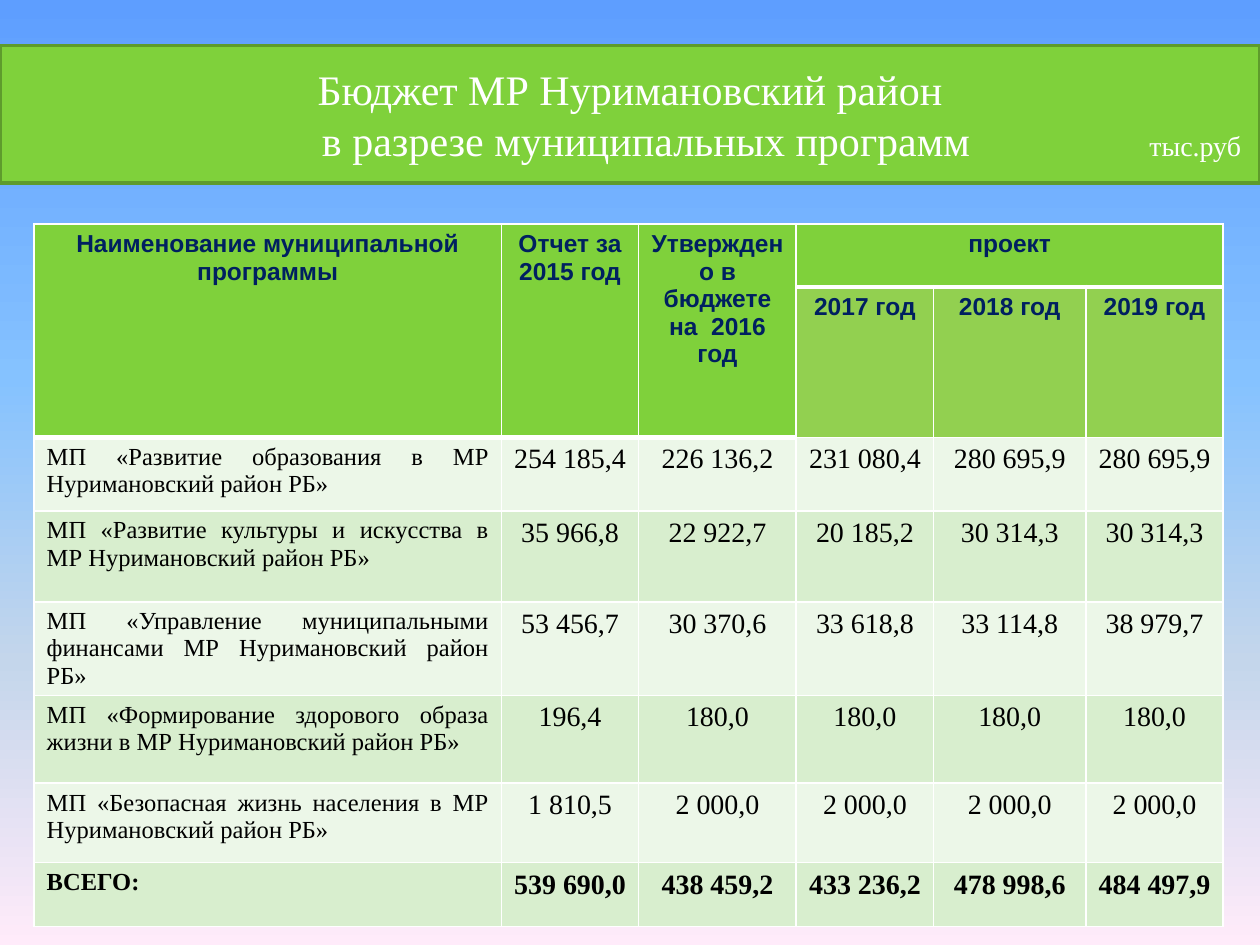
from typing import NamedTuple

from lxml import etree
from pptx import Presentation
from pptx.dml.color import RGBColor
from pptx.enum.text import MSO_ANCHOR, PP_ALIGN
from pptx.oxml.ns import qn
from pptx.util import Pt

CENTER, JUSTIFY, LEFT = PP_ALIGN.CENTER, PP_ALIGN.JUSTIFY, PP_ALIGN.LEFT
MIDDLE = MSO_ANCHOR.MIDDLE

SERIF, SANS = "Times New Roman", "Arial"
WHITE, BLACK, NAVY = "FFFFFF", "000000", "002060"
GREEN, DARK_GREEN, YEAR_GREEN = "7FD13B", "5E9B2C", "92D050"
BANDS = ("ECF7E8", "D8EECE")
SKY = ((0, "5E9EFF"), (40, "85C2FF"), (70, "C4D6EB"), (100, "FFEBFA"))

COLUMN_WIDTHS = (267, 78.5, 90, 78.5, 87, 78.5)
ROW_HEIGHTS = (36, 36, 42, 52, 40, 50, 45.5, 36.5)


class Heading(NamedTuple):
    text: str
    row: int
    column: int
    last_row: int
    last_column: int
    fill: str = GREEN


class Program(NamedTuple):
    name: str
    amounts: tuple[str, ...]
    bold: bool = False


HEADINGS = (
    Heading("Наименование муниципальной программы", 0, 0, 1, 0),
    Heading("Отчет за 2015 год", 0, 1, 1, 1),
    Heading("Утверждено в бюджете на  2016 год", 0, 2, 1, 2),
    Heading("проект", 0, 3, 0, 5),
    *(Heading(f"{2017 + i} год", 1, 3 + i, 1, 3 + i, YEAR_GREEN) for i in range(3)),
)
PROGRAMS = (
    Program("МП «Развитие образования в МР Нуримановский район РБ»",
            ("254 185,4", "226 136,2", "231 080,4", "280 695,9", "280 695,9")),
    Program("МП «Развитие культуры и искусства в МР Нуримановский район РБ»",
            ("35 966,8", "22 922,7", "20 185,2", "30 314,3", "30 314,3")),
    Program("МП «Управление муниципальными финансами МР Нуримановский район РБ»",
            ("53 456,7", "30 370,6", "33 618,8", "33 114,8", "38 979,7")),
    Program("МП «Формирование здорового образа жизни в МР Нуримановский район РБ»",
            ("196,4", "180,0", "180,0", "180,0", "180,0")),
    Program("МП «Безопасная жизнь населения в МР Нуримановский район РБ»",
            ("1 810,5", "2 000,0", "2 000,0", "2 000,0", "2 000,0")),
    Program("ВСЕГО:",
            ("539 690,0", "438 459,2", "433 236,2", "478 998,6", "484 497,9"), True),
)


def color(value: str) -> RGBColor:
    return RGBColor.from_string(value)


def add_text(para, text: str, *, size: float, font: str = SERIF,
             fill: str = BLACK, bold: bool = False, align=CENTER) -> None:
    para.alignment = align
    span = para.add_run()
    span.text = text
    span.font.name = font
    span.font.size = Pt(size)
    span.font.bold = bold
    span.font.color.rgb = color(fill)


def add_tabs(para, stops: dict[str, float]) -> None:
    tabs = etree.SubElement(para._p.get_or_add_pPr(), qn("a:tabLst"))
    for kind, position in stops.items():
        etree.SubElement(tabs, qn("a:tab"), pos=str(Pt(position)), algn=kind)


def paint_background(page) -> None:
    fill = page.background.fill
    fill.gradient()
    fill.gradient_angle = 270
    stops = page.element.find(".//" + qn("a:gsLst"))
    for stop in list(stops):
        stops.remove(stop)
    for percent, value in SKY:
        stop = etree.SubElement(stops, qn("a:gs"), pos=str(percent * 1000))
        etree.SubElement(stop, qn("a:srgbClr"), val=value)


def draw_title(page) -> None:
    box = page.shapes.title
    box.left, box.top, box.width, box.height = Pt(0), Pt(26), Pt(720), Pt(78.5)
    box.fill.solid()
    box.fill.fore_color.rgb = color(GREEN)
    box.line.color.rgb = color(DARK_GREEN)
    box.line.width = Pt(2)
    frame = box.text_frame
    frame.word_wrap = True
    frame.vertical_anchor = MIDDLE
    add_text(frame.paragraphs[0], "Бюджет МР Нуримановский район", size=24, fill=WHITE)
    # The second line holds a centred part and the unit at the right edge
    para = frame.add_paragraph()
    add_tabs(para, {"ctr": 362, "r": 702})
    add_text(para, "\tв разрезе муниципальных программ", size=24, fill=WHITE, align=LEFT)
    add_text(para, "\tтыс.руб", size=16, fill=WHITE, align=LEFT)


def style_cell(cell, fill: str, bottom: float = 1) -> None:
    properties = cell._tc.get_or_add_tcPr()
    for side, width in (("L", 1), ("R", 1), ("T", 1), ("B", bottom)):
        line = etree.SubElement(properties, qn(f"a:ln{side}"), w=str(Pt(width)))
        solid = etree.SubElement(line, qn("a:solidFill"))
        etree.SubElement(solid, qn("a:srgbClr"), val=WHITE)
    cell.fill.solid()
    cell.fill.fore_color.rgb = color(fill)


def draw_heading(table, heading: Heading) -> None:
    origin = table.cell(heading.row, heading.column)
    if (heading.row, heading.column) != (heading.last_row, heading.last_column):
        origin.merge(table.cell(heading.last_row, heading.last_column))
    for row in range(heading.row, heading.last_row + 1):
        for column in range(heading.column, heading.last_column + 1):
            style_cell(table.cell(row, column), heading.fill,
                       bottom=3 if heading.fill == GREEN else 1)
    add_text(origin.text_frame.paragraphs[0], heading.text,
             size=14, font=SANS, fill=NAVY, bold=True)


def draw_program(table, row: int, program: Program) -> None:
    for column, text in enumerate((program.name, *program.amounts)):
        cell = table.cell(row, column)
        style_cell(cell, BANDS[row % 2])
        add_text(cell.text_frame.paragraphs[0], text, bold=program.bold,
                 size=16 if column else 14, align=CENTER if column else JUSTIFY)


def draw_table(page) -> None:
    frame = page.shapes.add_table(len(ROW_HEIGHTS), len(COLUMN_WIDTHS),
                                  Pt(19.5), Pt(128), Pt(680), Pt(356))
    table = frame.table
    for column, width in zip(table.columns, COLUMN_WIDTHS):
        column.width = Pt(width)
    for row, height in zip(table.rows, ROW_HEIGHTS):
        row.height = Pt(height)
    for heading in HEADINGS:
        draw_heading(table, heading)
    for row, program in enumerate(PROGRAMS, start=2):
        draw_program(table, row, program)


def main() -> None:
    deck = Presentation()
    deck.slide_width, deck.slide_height = Pt(720), Pt(540)
    page = deck.slides.add_slide(deck.slide_layouts[5])
    paint_background(page)
    draw_title(page)
    draw_table(page)
    deck.save("out.pptx")


if __name__ == "__main__":
    main()
